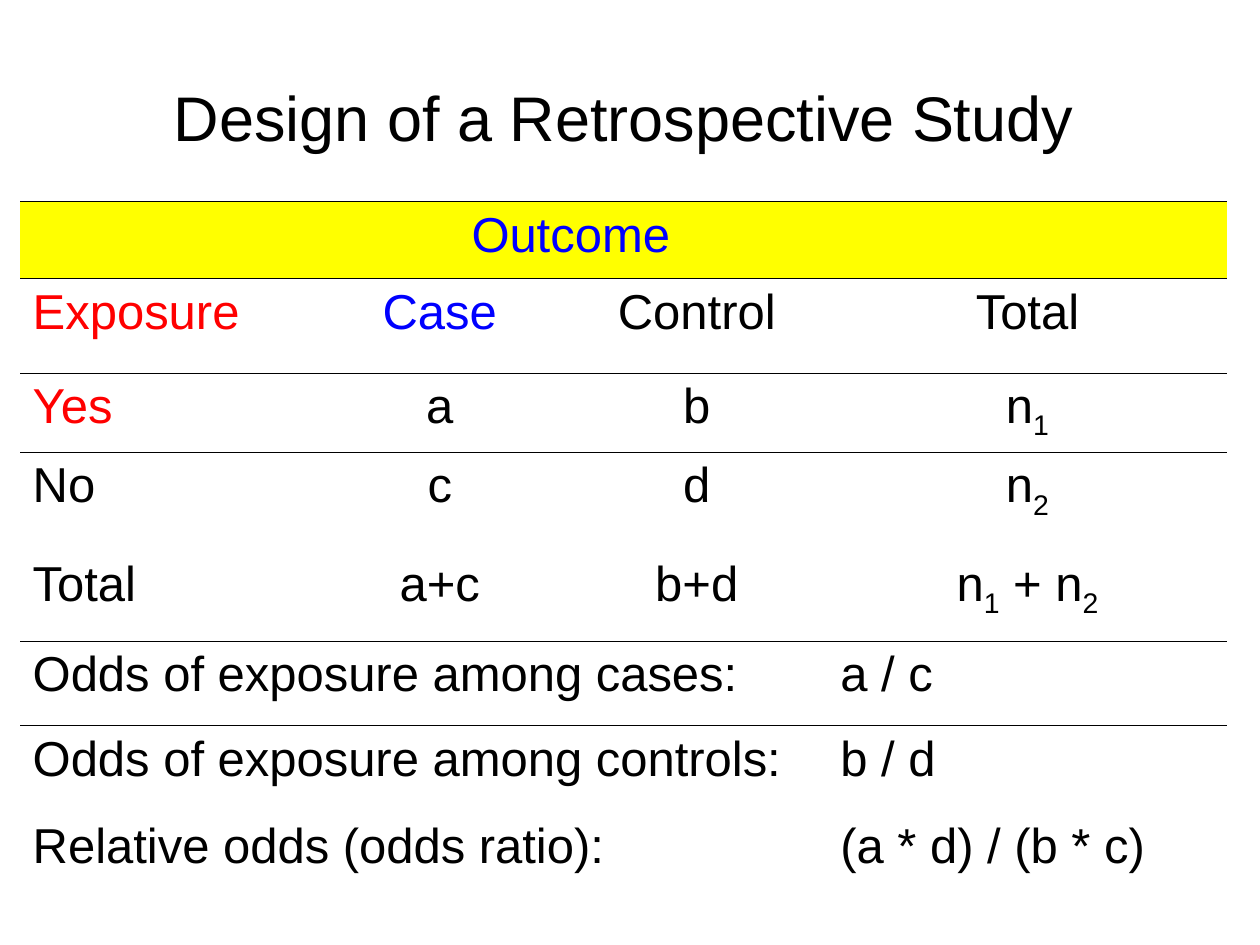
from pptx import Presentation
from pptx.dml.color import RGBColor
from pptx.enum import text
from pptx.oxml import parse_xml
from pptx.oxml.ns import nsdecls
from pptx.util import Pt

BLACK = RGBColor(0, 0, 0)
BLUE = RGBColor(0, 0, 255)
RED = RGBColor(255, 0, 0)
YELLOW = RGBColor(255, 255, 0)
NO_STYLE = "{2D5ABB26-0587-4C30-8999-92F81FD0307C}"

# An underscore marks the next character as a subscript; None is a merged cell.
ROWS = [
    ("Design of a Retrospective Study", None, None, None),
    ("", "Outcome", None, ""),
    ("Exposure", "Case", "Control", "Total"),
    ("Yes", "a", "b", "n_1"),
    ("No", "c", "d", "n_2"),
    ("Total", "a+c", "b+d", "n_1 + n_2"),
    ("Odds of exposure among cases:", None, None, "a / c"),
    ("Odds of exposure among controls:", None, None, "b / d"),
    ("Relative odds (odds ratio):", None, None, "(a * d) / (b * c)"),
]
COLORS = {"Outcome": BLUE, "Case": BLUE, "Exposure": RED, "Yes": RED}
TITLE_ROW, OUTCOME_ROW, FIRST_ODDS_ROW = 0, 1, 6
COLUMN_WIDTHS = [167.76, 144, 149.76, 228.24]
ROW_HEIGHTS = [70.56, 43.92, 54, 45.36, 56.16, 51.84, 48.24, 50, 36]
# Row above each rule: the columns it crosses
RULES = {0: range(4), 1: range(1, 3), 2: range(4), 5: range(4)}
LEFT, TOP = 11.52, 44.64


def draw_edge(cell, side):
    """Put a thin black line on one side of a cell: "T" or "B"."""
    line = parse_xml(
        f'<a:ln{side} {nsdecls("a")} w="3175"><a:solidFill>'
        f'<a:srgbClr val="{BLACK}"/></a:solidFill></a:ln{side}>')
    properties = cell._tc.get_or_add_tcPr()
    properties.insert(1 if side == "B" and len(properties) > 1 else 0, line)


def write(cell, content, size, color, align):
    paragraph = cell.text_frame.paragraphs[0]
    paragraph.alignment = align
    base, *rest = content.split("_")
    pieces = [(base, False)]
    for part in rest:
        pieces += [(part[0], True), (part[1:], False)]
    for piece, is_subscript in pieces:
        if not piece:
            continue
        run = paragraph.add_run()
        run.text = piece
        for name, value in {"name": "Arial", "size": Pt(size)}.items():
            setattr(run.font, name, value)
        run.font.color.rgb = color
        if is_subscript:
            run.font._element.set("baseline", "-25000")


def fill_table(table):
    for column, width in zip(table.columns, COLUMN_WIDTHS):
        column.width = Pt(width)
    for row, height in zip(table.rows, ROW_HEIGHTS):
        row.height = Pt(height)
    for r, contents in enumerate(ROWS):
        for c, content in enumerate(contents):
            cell = table.cell(r, c)
            if r == OUTCOME_ROW:
                cell.fill.solid()
                cell.fill.fore_color.rgb = YELLOW
            else:
                cell.fill.background()
            if content is None:
                continue
            last = c
            while last + 1 < len(contents) and contents[last + 1] is None:
                last += 1
            if last > c:
                cell.merge(table.cell(r, last))
            centred = r == TITLE_ROW or (c > 0 and r < FIRST_ODDS_ROW)
            align = text.PP_ALIGN.CENTER if centred else text.PP_ALIGN.LEFT
            write(cell, content, 36 if r == TITLE_ROW else 28,
                  COLORS.get(content, BLACK), align)
    for r, columns in RULES.items():
        for c in columns:
            draw_edge(table.cell(r, c), "B")
            draw_edge(table.cell(r + 1, c), "T")


def main():
    deck = Presentation()
    deck.slide_width, deck.slide_height = Pt(720), Pt(540)
    slide = deck.slides.add_slide(deck.slide_layouts[6])
    frame = slide.shapes.add_table(
        len(ROWS), len(COLUMN_WIDTHS), Pt(LEFT), Pt(TOP),
        Pt(sum(COLUMN_WIDTHS)), Pt(sum(ROW_HEIGHTS)))
    table = frame.table
    table.first_row = table.horz_banding = False
    table._tbl.tblPr.find("{*}tableStyleId").text = NO_STYLE
    fill_table(table)
    deck.save("out.pptx")


if __name__ == "__main__":
    main()
